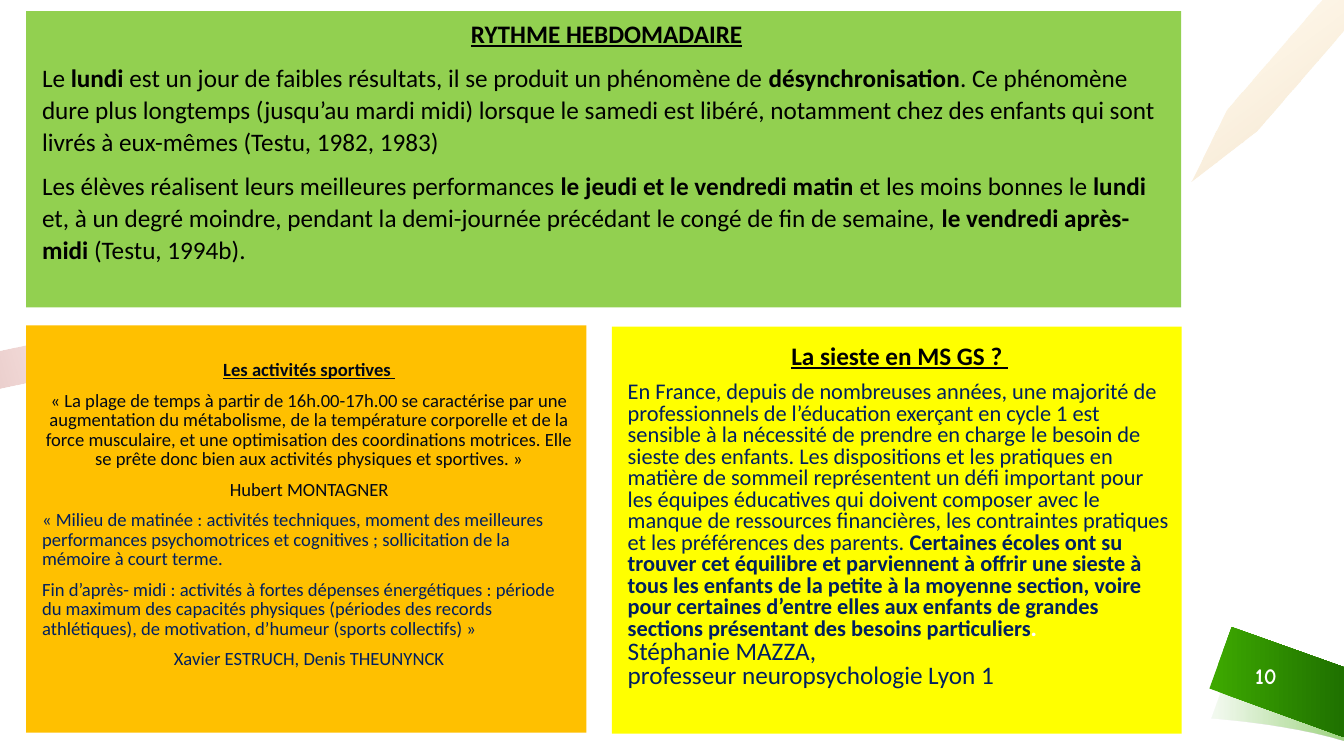
import pptx
import pptx.util
import pptx.dml.color
import pptx.enum.shapes
import pptx.enum.text
import pptx.oxml.ns
import lxml.etree

Cm, Pt = pptx.util.Cm, pptx.util.Pt
ALIGN = pptx.enum.text.PP_ALIGN
ANCHOR = pptx.enum.text.MSO_ANCHOR

COLORS = {
    "green": "92D050", "orange": "FFC000", "yellow": "FFFF00",
    "black": "000000", "ink": "000818", "navy": "002060", "white": "FFFFFF",
    "leaf": "3DA800", "forest": "1F7100", "red": "D30F00", "brick": "9D0F00",
    "amber": "FFAA00", "brown": "C07400",
}

STYLES = {
    "title": ("Calibri", 18, "black", True, True),
    "text": ("Calibri", 18, "black", False, False),
    "strong": ("Calibri", 18, "black", True, False),
    "sport title": ("Calibri", 13.3, "ink", True, True),
    "sport": ("Calibri", 13.3, "ink", False, False),
    "sport navy": ("Calibri", 13.3, "navy", False, False),
    "nap": ("Calibri", 16, "navy", False, False),
    "nap strong": ("Calibri", 16, "navy", True, False),
    "nap stop": ("Karla", 16, "white", True, False),
    "author": ("Calibri", 18, "navy", False, False),
    "number": ("Comic Neue", 16, "white", True, False),
}

WEEK = [
    ("c", 1.07, 8, [("title", "RYTHME HEBDOMADAIRE")]),
    ("l", 1.07, 8, [
        ("text", "Le "), ("strong", "lundi"),
        ("text", " est un jour de faibles résultats, il se produit un phénomène de "),
        ("strong", "désynchronisation"),
        ("text", ". Ce phénomène dure plus longtemps (jusqu’au mardi midi) lorsque le samedi est "
                 "libéré, notamment chez des enfants qui sont livrés à eux-mêmes (Testu, 1982, 1983)")]),
    ("l", 1.07, 8, [
        ("text", "Les élèves réalisent leurs meilleures performances "),
        ("strong", "le jeudi et le vendredi matin "),
        ("text", "et les moins bonnes le "), ("strong", "lundi "),
        ("text", "et, à un degré moindre, pendant la demi-journée précédant le congé de fin de semaine, "),
        ("strong", "le vendredi après-midi"), ("text", " (Testu, 1994b).")]),
]

SPORT = [
    ("c", 0.87, 8, [("sport title", "Les activités sportives ")]),
    ("c", 0.87, 8, [
        ("sport", "« La plage de temps à partir de 16h.00-17h.00 se caractérise par une augmentation du "
                  "métabolisme, de la température corporelle et de la force musculaire, et une "
                  "optimisation des coordinations motrices. Elle se prête donc bien aux activités "
                  "physiques et sportives. »")]),
    ("c", 0.87, 8, [("sport", "Hubert MONTAGNER")]),
    ("l", 0.87, 8, [
        ("sport navy", "« Milieu de matinée : activités techniques, moment des meilleures performances "
                       "psychomotrices et cognitives ; sollicitation de la mémoire à court terme.")]),
    ("l", 0.87, 8, [
        ("sport navy", "Fin d’après- midi : activités à fortes dépenses énergétiques : période du maximum "
                       "des capacités physiques (périodes des records athlétiques), de motivation, "
                       "d’humeur (sports collectifs) »")]),
    ("c", 0.87, 8, [("sport navy", "Xavier ESTRUCH, Denis THEUNYNCK")]),
]

NAP = [
    ("c", 0.97, 8, [("title", "La sieste en MS GS ? ")]),
    ("l", 0.8, 0, [
        ("nap", "En France, depuis de nombreuses années, une majorité de professionnels de l’éducation "
                "exerçant en cycle 1 est sensible à la nécessité de prendre en charge le besoin de sieste "
                "des enfants. Les dispositions et les pratiques en matière de sommeil représentent un défi "
                "important pour les équipes éducatives qui doivent composer avec le manque de ressources "
                "financières, les contraintes pratiques et les préférences des parents. "),
        ("nap strong", "Certaines écoles ont su trouver cet équilibre et parviennent à offrir une sieste à "
                       "tous les enfants de la petite à la moyenne section, voire pour certaines d’entre "
                       "elles aux enfants de grandes sections présentant des besoins particuliers"),
        ("nap stop", ".")]),
    ("l", 0.8, 0, [("author", "Stéphanie MAZZA,")]),
    ("l", 0.8, 0, [("author", "professeur neuropsychologie Lyon 1")]),
]

PANELS = [
    ("green", (0.66, 0.28, 29.11, 7.47), 0.13, WEEK),
    ("orange", (0.66, 8.2, 14.12, 10.26), 0.9, SPORT),
    ("yellow", (15.42, 8.23, 14.36, 10.26), 0.39, NAP),
]

PAGE_NUMBER = [("c", 1, 0, [("number", "10")])]
NUMBER_BOX = (31.01, 16.51, 1.78, 1.02)


def curve(a, b, c, d, steps=12):
    points = []
    for i in range(steps + 1):
        t = i / steps
        u = 1 - t
        points.append(tuple(u**3 * e + 3 * u * u * t * f + 3 * u * t * t * g + t**3 * h
                            for e, f, g, h in zip(a, b, c, d)))
    return points


RIBBON_SHADOW = (
    curve((30.53, 18.11), (30.53, 18.11), (32.46, 18.24), (33.86, 18.67))
    + curve((33.86, 16.97), (32.31, 16.54), (31.09, 16.56), (31.09, 16.56)))
RIBBON = [(33.86, 16.81), (31.04, 15.8), (30.48, 17.35), (33.86, 18.57)]
RED_STROKE = [(3.56, 8.53), (1.47, 8.53), (0, 8.84), (0, 9.8), (1.78, 9.42)]
AMBER_STROKE = [(33.32, 0), (30.91, 2.77), (30.02, 4.57), (31.67, 3.3), (33.86, 0.79), (33.86, 0)]

DECOR = [
    (RIBBON_SHADOW, 0, [(0.03, "leaf", 6), (1, "leaf", 50)]),
    (RIBBON, 0, [(0.03, "leaf", 100), (1, "forest", 100)]),
    (RED_STROKE, 164, [(0, "red", 5), (1, "brick", 20)]),
    (AMBER_STROKE, 53, [(0, "amber", 5), (1, "brown", 20)]),
]


def rgb(name):
    return pptx.dml.color.RGBColor.from_string(COLORS[name])


def add_decor(s, points, angle, stops):
    start, *rest = [(Cm(x), Cm(y)) for x, y in points]
    builder = s.shapes.build_freeform(*start)
    builder.add_line_segments(rest, close=True)
    sp = builder.convert_to_shape()
    sp.shadow.inherit = False
    sp.line.fill.background()
    sp.fill.gradient()
    sp.fill.gradient_angle = -angle % 360
    for stop, (position, color, opacity) in zip(sp.fill.gradient_stops, stops):
        stop.position = position
        stop.color.rgb = rgb(color)
    for tag, (position, color, opacity) in zip(sp._element.spPr.iter(pptx.oxml.ns.qn("a:srgbClr")), stops):
        if opacity < 100:
            alpha = lxml.etree.SubElement(tag, pptx.oxml.ns.qn("a:alpha"))
            alpha.set("val", str(opacity * 1000))


def write(tf, paragraphs):
    tf.word_wrap = True
    for i, (align, spacing, after, runs) in enumerate(paragraphs):
        p = tf.add_paragraph() if i else tf.paragraphs[0]
        p.alignment = ALIGN.CENTER if align == "c" else ALIGN.LEFT
        p.line_spacing = spacing
        p.space_after = Pt(after)
        for style, text in runs:
            r = p.add_run()
            r.text = text
            font, size, color, r.font.bold, r.font.underline = STYLES[style]
            r.font.name = font
            r.font.size = Pt(size)
            r.font.color.rgb = rgb(color)


def add_panel(s, color, box, top, paragraphs):
    sp = s.shapes.add_shape(pptx.enum.shapes.MSO_SHAPE.RECTANGLE, *map(Cm, box))
    sp.shadow.inherit = False
    sp.fill.solid()
    sp.fill.fore_color.rgb = rgb(color)
    sp.line.fill.background()
    tf = sp.text_frame
    tf.vertical_anchor = ANCHOR.TOP
    tf.margin_left, tf.margin_top = Cm(0.4), Cm(top)
    tf.margin_right, tf.margin_bottom = Cm(0.25), Cm(0.13)
    write(tf, paragraphs)


def main():
    prs = pptx.Presentation()
    prs.slide_width, prs.slide_height = Cm(33.87), Cm(19.05)
    s = prs.slides.add_slide(prs.slide_layouts[6])
    for decor in DECOR:
        add_decor(s, *decor)
    tf = s.shapes.add_textbox(*map(Cm, NUMBER_BOX)).text_frame
    tf.vertical_anchor = ANCHOR.MIDDLE
    write(tf, PAGE_NUMBER)
    for panel in PANELS:
        add_panel(s, *panel)
    prs.save("out.pptx")


if __name__ == "__main__":
    main()
